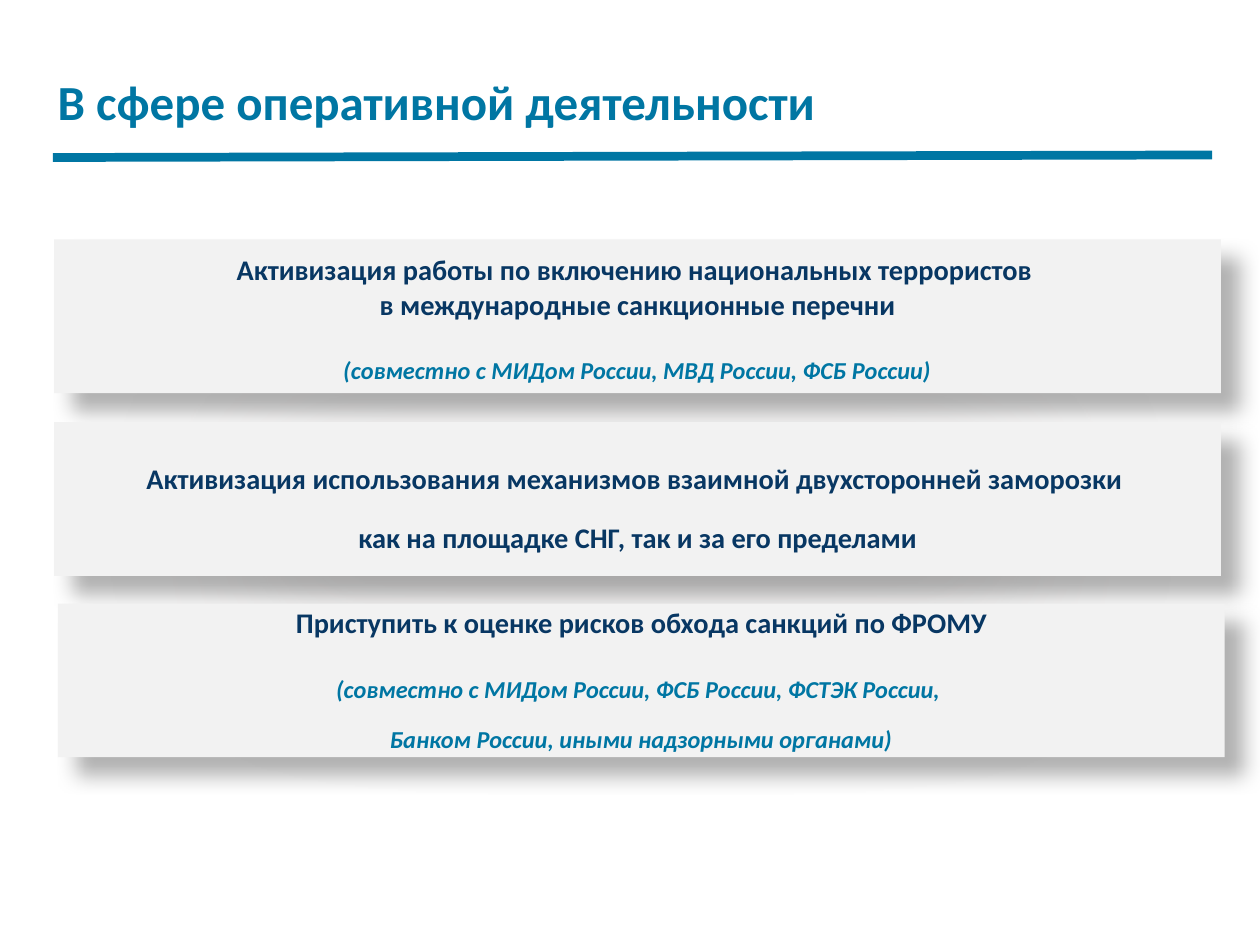
from lxml import etree
from pptx import Presentation
from pptx.dml.color import RGBColor
from pptx.enum.shapes import MSO_CONNECTOR, MSO_SHAPE
from pptx.enum.text import MSO_ANCHOR, PP_ALIGN
from pptx.oxml import parse_xml
from pptx.oxml.ns import qn
from pptx.util import Inches, Pt

TEAL = RGBColor(0x00, 0x76, 0xA3)
NAVY = RGBColor(0x08, 0x37, 0x63)
PALE = RGBColor(0xF2, 0xF2, 0xF2)
BLUE = RGBColor(0xC8, 0xE3, 0xFB)
GRAY = RGBColor(0xE7, 0xE6, 0xE6)
NS = 'xmlns:a="http://schemas.openxmlformats.org/drawingml/2006/main"'
SHADOW = ('<a:outerShdw blurRad="139700" dist="190500" dir="2700000" algn="tl" rotWithShape="0">'
          '<a:srgbClr val="000000"><a:alpha val="30000"/></a:srgbClr></a:outerShdw>')


def add_text(p, text, size, color, italic=False, raised=True, align=PP_ALIGN.CENTER,
             spacing=None, before=None):
    p.text = text
    p.alignment = align
    p.line_spacing = spacing
    p.space_before = before
    for r in p.runs:
        f = r.font
        f.name, f.size, f.bold, f.italic = "Calibri", Pt(size), True, italic
        f.color.rgb = color
        if raised:
            r._r.get_or_add_rPr().set("baseline", "30000")


def add_rect(box, color, effect):
    sp = s.shapes.add_shape(MSO_SHAPE.RECTANGLE, *[Inches(v) for v in box])
    sp.fill.solid()
    sp.fill.fore_color.rgb = color
    sp.line.fill.background()
    sp._element.spPr.append(parse_xml(f"<a:effectLst {NS}>{effect}</a:effectLst>"))
    return sp


prs = Presentation()
prs.slide_width, prs.slide_height = Inches(10), Inches(7.5)
s = prs.slides.add_slide(prs.slide_layouts[6])

rule = s.shapes.add_connector(MSO_CONNECTOR.STRAIGHT, Inches(0.42), Inches(1.25),
                              Inches(9.62), Inches(1.23))
rule.line.color.rgb = TEAL
rule.line.width = Pt(5)
etree.SubElement(rule._element.spPr, qn("a:effectLst"))

title = s.shapes.add_textbox(Inches(0.36), Inches(0.57), Inches(9.27), Inches(0.53))
title.text_frame.word_wrap = True
add_text(title.text_frame.paragraphs[0], "В сфере оперативной деятельности", 28, TEAL,
         raised=False, align=PP_ALIGN.LEFT, spacing=0.9)

panel = add_rect((0.16, 1.46, 9.86, 5.46), GRAY, '<a:softEdge rad="1270000"/>')
fill_color = panel._element.spPr.find(qn("a:solidFill"))[0]
etree.SubElement(fill_color, qn("a:alpha")).set("val", "60000")

cards = [
    (0.36, 1.64, 0.43, 1.9, 0.35, Pt(20),
     "Активизация работы по включению национальных террористов \n"
     "в международные санкционные перечни",
     "(совместно с МИДом России, МВД России, ФСБ России)"),
    (0.42, 3.11, 0.43, 3.35, 0.29, None,
     "Активизация использования механизмов взаимной двухсторонней заморозки \n"
     "как на площадке СНГ, так и за его пределами", None),
    (0.42, 4.58, 0.46, 4.79, 0.29, Pt(21),
     "Приступить к оценке рисков обхода санкций по ФРОМУ",
     "(совместно с МИДом России, ФСБ России, ФСТЭК России, \n"
     "Банком России, иными надзорными органами)"),
]
for glow_x, glow_y, x, y, inset, spacing, task, partners in cards:
    add_rect((glow_x, glow_y, 7.22, 1.45), BLUE, '<a:softEdge rad="635000"/>')
    card = add_rect((x, y, 9.26, 1.22), PALE, SHADOW)
    tf = card.text_frame
    tf.word_wrap = True
    tf.vertical_anchor = MSO_ANCHOR.MIDDLE
    tf.margin_top = Inches(inset)
    add_text(tf.paragraphs[0], task, 28, NAVY, spacing=spacing)
    if partners:
        add_text(tf.add_paragraph(), partners, 24, TEAL, italic=True, before=Pt(6))

prs.save("out.pptx")
